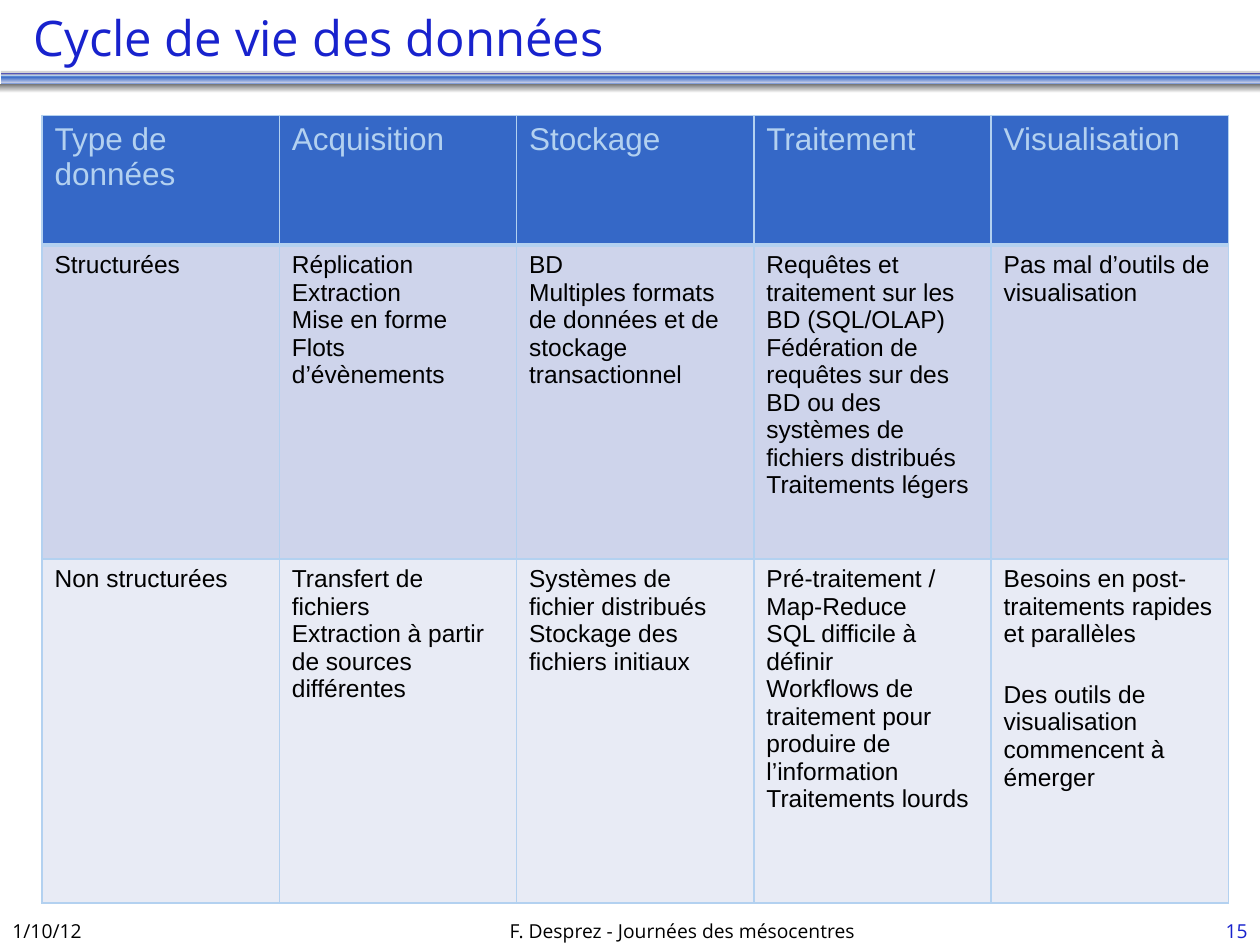
from lxml.etree import SubElement
from pptx import Presentation
from pptx.dml.color import RGBColor
from pptx.enum.shapes import MSO_SHAPE as SHAPE
from pptx.enum.text import MSO_ANCHOR as ANCHOR, PP_ALIGN as ALIGN
from pptx.oxml.ns import qn
from pptx.util import Pt

BLACK = RGBColor(0, 0, 0)
WHITE = RGBColor(0xFF, 0xFF, 0xFF)
GREY = RGBColor(0x77, 0x77, 0x77)
INK = RGBColor(0x18, 0x22, 0xCD)
LILAC = RGBColor(0xBA, 0xBB, 0xE7)
BLUE = RGBColor(0x35, 0x68, 0xC7)
SKY = RGBColor(0xB3, 0xD1, 0xF0)
PALE = RGBColor(0xCA, 0xD0, 0xE9)
BAND_DARK = RGBColor(0xCE, 0xD4, 0xEB)
BAND_LIGHT = RGBColor(0xE8, 0xEB, 0xF5)

# Content
TITLE = "Cycle de vie des données"
HEADER = ["Type de données", "Acquisition", "Stockage", "Traitement", "Visualisation"]
STRUCTURED = [
    "Structurées",
    "Réplication\nExtraction\nMise en forme\nFlots d’évènements",
    "BD\nMultiples formats de données et de stockage\ntransactionnel",
    "Requêtes et traitement sur les BD (SQL/OLAP)\n"
    "Fédération de requêtes sur des BD ou des systèmes de fichiers distribués\n"
    "Traitements légers",
    "Pas mal d’outils de visualisation",
]
UNSTRUCTURED = [
    "Non structurées",
    "Transfert de fichiers\nExtraction à partir de sources différentes",
    "Systèmes de fichier distribués\nStockage des fichiers initiaux",
    "Pré-traitement / Map-Reduce\nSQL difficile à définir\n"
    "Workflows de traitement pour produire de l’information\nTraitements lourds",
    "Besoins en post-traitements rapides et parallèles\n"
    "Des outils de visualisation commencent à émerger",
]
# texts, height, fill, text size, text colour, bottom border width
ROWS = [
    (HEADER, 74, BLUE, 18, SKY, 3),
    (STRUCTURED, 179.5, BAND_DARK, 14, BLACK, 1),
    (UNSTRUCTURED, 196.5, BAND_LIGHT, 14, BLACK, 1),
]
# left, width, text, alignment, colour
FOOTERS = [
    (0, 96, "1/10/12", ALIGN.LEFT, BLACK),
    (108, 564, "F. Desprez - Journées des mésocentres", ALIGN.CENTER, BLACK),
    (684, 36, "15", ALIGN.RIGHT, INK),
]
# left, top, height, colours from top to bottom, opacity in percent
BARS = [
    (0.5, 42.5, 1.5, [SKY], 100),
    (0.5, 44, 3.5, [BLUE, PALE], 100),
    (0.5, 41.8, 0.7, [INK, LILAC], 100),
    (0.5, 47.4, 0.8, [PALE, BLUE], 100),
    (0.5, 43.2, 0.8, [SKY, BLUE], 100),
    (0, 48.2, 5, [GREY, WHITE], 100),
    (0.5, 40.5, 2.5, [GREY], 31),
]
TABLE_LEFT, TABLE_TOP, COL_WIDTH = 24, 66, 135.6
PARAGRAPH_GAP = 19


def style(p, name, size, color, align=ALIGN.LEFT):
    p.alignment = align
    for key, value in {"name": name, "size": Pt(size), "bold": False}.items():
        setattr(p.font, key, value)
    p.font.color.rgb = color


def add_bar(s, left, top, height, colors, opacity):
    sp = s.shapes.add_shape(SHAPE.RECTANGLE, Pt(left), Pt(top), Pt(720 - left), Pt(height))
    sp.shadow.inherit = False
    sp.line.fill.background()
    if len(colors) == 1:
        sp.fill.solid()
        sp.fill.fore_color.rgb = colors[0]
    else:
        sp.fill.gradient()
        sp.fill.gradient_angle = 270
        for stop, color in zip(sp.fill.gradient_stops, colors):
            stop.color.rgb = color
    if opacity < 100:
        color = sp.fill._xPr.find(".//" + qn("a:srgbClr"))
        SubElement(color, qn("a:alpha"), val=str(opacity * 1000))


def set_borders(cell, bottom):
    tcPr = cell._tc.get_or_add_tcPr()
    for i, (side, width) in enumerate(zip("LRTB", (1, 1, 1, bottom))):
        ln = tcPr.makeelement(qn(f"a:ln{side}"), {"w": str(Pt(width))})
        fill = SubElement(ln, qn("a:solidFill"))
        SubElement(fill, qn("a:srgbClr"), val=str(SKY))
        tcPr.insert(i, ln)


prs = Presentation()
prs.slide_width, prs.slide_height = Pt(720), Pt(540)
s = prs.slides.add_slide(prs.slide_layouts[5])

# Ruled band under the title
for bar in BARS:
    add_bar(s, *bar)

# Title
title = s.shapes.title
title.left, title.top, title.width, title.height = Pt(12), Pt(-1.5), Pt(702), Pt(45)
tf = title.text_frame
tf.text = TITLE
tf.vertical_anchor = ANCHOR.MIDDLE
style(tf.paragraphs[0], "Open Sans", 28, INK)

# Footer
for left, width, text, align, color in FOOTERS:
    tf = s.shapes.add_textbox(Pt(left), Pt(522), Pt(width), Pt(18)).text_frame
    tf.word_wrap = True
    tf.text = text
    style(tf.paragraphs[0], "Open Sans", 11, color, align)

# Table
table = s.shapes.add_table(
    len(ROWS), len(HEADER), Pt(TABLE_LEFT), Pt(TABLE_TOP),
    Pt(COL_WIDTH * len(HEADER)), Pt(sum(row[1] for row in ROWS))).table
table.first_row = table.horz_banding = False
for column in table.columns:
    column.width = Pt(COL_WIDTH)
for r, (texts, height, fill, size, color, bottom) in enumerate(ROWS):
    table.rows[r].height = Pt(height)
    for c, text in enumerate(texts):
        cell = table.cell(r, c)
        cell.text = text
        cell.fill.solid()
        cell.fill.fore_color.rgb = fill
        set_borders(cell, bottom)
        for p in cell.text_frame.paragraphs:
            style(p, "Arial", size, color)
table.cell(2, 4).text_frame.paragraphs[1].space_before = Pt(PARAGRAPH_GAP)

prs.save("out.pptx")
